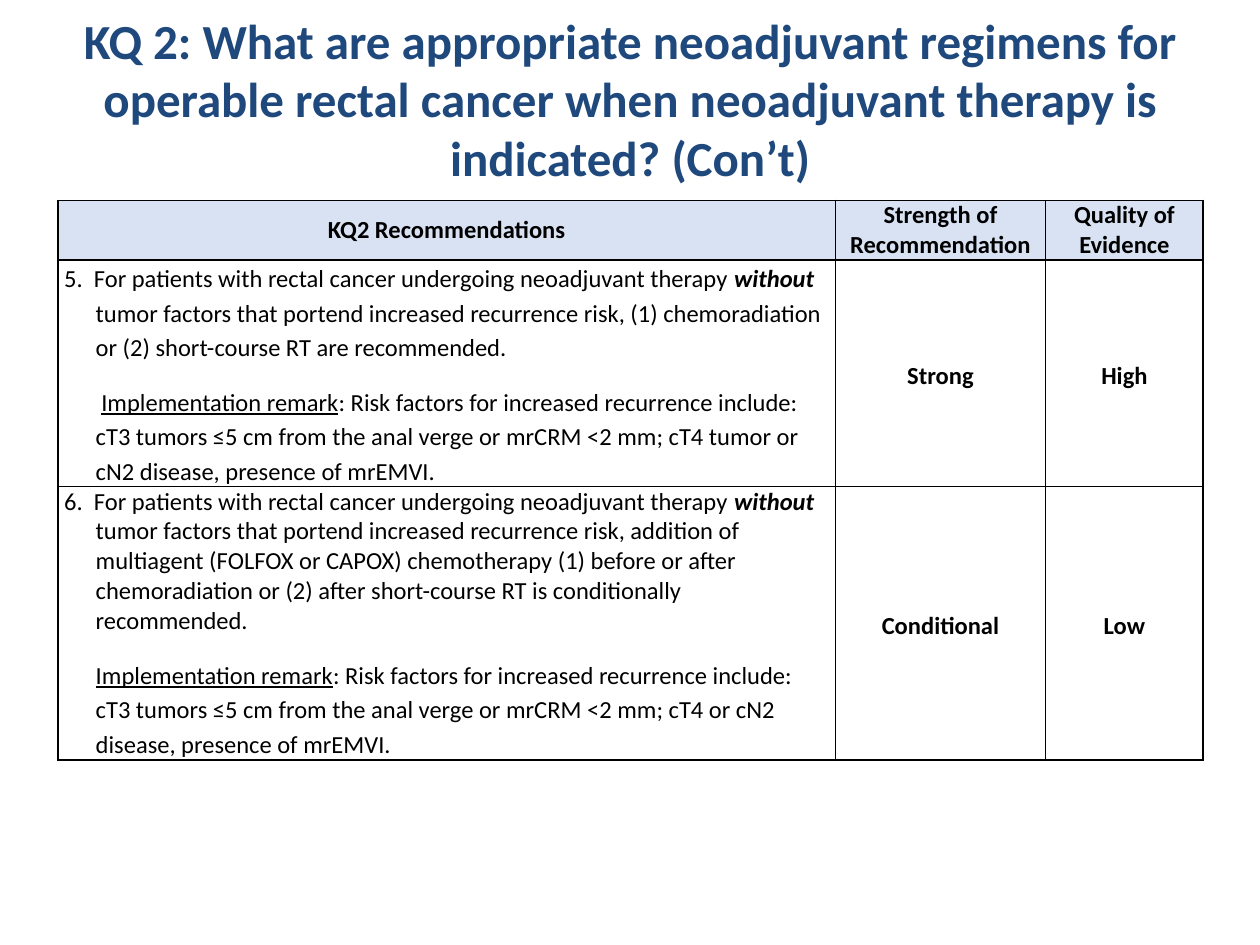
from lxml.etree import SubElement
from pptx import Presentation
from pptx.dml.color import RGBColor
from pptx.enum.text import MSO_ANCHOR as Anchor, MSO_AUTO_SIZE as Fit, PP_ALIGN as Align
from pptx.oxml.ns import qn
from pptx.util import Inches, Pt

NAVY = RGBColor(0x1F, 0x49, 0x7D)
BLACK = RGBColor(0, 0, 0)
PALE = RGBColor(0xD9, 0xE2, 0xF3)
FONT = "Calibri"
WIDE, HIGH = 10, 7.5
COLS = [6.17, 1.67, 1.25]
ROWS = [0.47, 1.79, 2.17]

TITLE = ("KQ 2: What are appropriate neoadjuvant regimens for operable "
         "rectal cancer when neoadjuvant therapy is indicated? (Con’t)")
HEADS = ["KQ2 Recommendations", "Strength of Recommendation", "Quality of Evidence"]
START = "For patients with rectal cancer undergoing neoadjuvant therapy "
RISK = " tumor factors that portend increased recurrence risk, "
NOTE = (": Risk factors for increased recurrence include: cT3 tumors ≤5 cm from "
        "the anal verge or mrCRM <2 mm; ")
ITEMS = [
    ("5.  ", "(1) chemoradiation or (2) short-course RT are recommended.",
     "\u00a0", "cT4 tumor or cN2 disease, presence of mrEMVI.", 1.15, "Strong", "High"),
    ("6.  ", "addition of multiagent (FOLFOX or CAPOX) chemotherapy (1) before or "
     "after chemoradiation or (2) after short-course RT is conditionally recommended.",
     "", "cT4 or cN2 disease, presence of mrEMVI.", 1.0, "Conditional", "Low"),
]


def add_run(para, text, style="", size=14, color=BLACK):
    """Add one run; style letters are b, i and u."""
    run = para.add_run()
    run.text = text
    font = run.font
    font.name, font.size, font.color.rgb = FONT, Pt(size), color
    font.bold, font.italic, font.underline = (key in style for key in "biu")


def add_title(slide):
    """Fill and place the title placeholder."""
    title = slide.shapes.title
    title.left, title.top = Inches(0.05 * WIDE), Inches(0.03)
    title.width, title.height = Inches(0.9 * WIDE), Inches(1.25)
    frame = title.text_frame
    frame.word_wrap, frame.auto_size = True, Fit.NONE
    frame.vertical_anchor = Anchor.TOP
    para = frame.paragraphs[0]
    para.alignment = Align.CENTER
    add_run(para, TITLE, "b", 28, NAVY)


def dress(cell, fill=None):
    """Give a cell its margins, borders and fill."""
    cell.margin_left = cell.margin_right = Inches(0.05)
    cell.margin_top = cell.margin_bottom = 0
    props = cell._tc.get_or_add_tcPr()
    for side in ("lnL", "lnR", "lnT", "lnB"):
        line = SubElement(props, qn(f"a:{side}"), w=str(Pt(1)))
        solid = SubElement(line, qn("a:solidFill"))
        SubElement(solid, qn("a:srgbClr"), val=str(BLACK))
    if fill is None:
        cell.fill.background()
    else:
        cell.fill.solid()
        cell.fill.fore_color.rgb = fill


def add_label(cell, text, space=1.15):
    """Write a bold label in the centre of a cell."""
    cell.vertical_anchor = Anchor.MIDDLE
    para = cell.text_frame.paragraphs[0]
    para.alignment, para.line_spacing = Align.CENTER, space
    add_run(para, text, "b")


def add_para(para, runs, first, space):
    """Write an indented paragraph from (text, style) runs."""
    props = para._p.get_or_add_pPr()
    props.set("marL", str(Inches(0.25)))
    props.set("indent", str(Inches(first)))
    para.line_spacing = space
    for text, style in runs:
        add_run(para, text, style)


def add_advice(cell, mark, advice, lead, risks, space):
    """Write a recommendation and its remark."""
    frame = cell.text_frame
    para = frame.paragraphs[0]
    add_para(para, [(mark + START, ""), ("without", "bi"), (RISK + advice, "")],
             -0.25, space)
    para.space_after = Pt(12)
    runs = [(lead, "b")] if lead else []
    runs += [("Implementation remark", "u"), (NOTE + risks, "")]
    add_para(frame.add_paragraph(), runs, 0, 1.15)


def add_grid(slide):
    """Build the table of recommendations."""
    grid = slide.shapes.add_table(
        len(ROWS), len(COLS), Inches(0.46), Inches(1.59),
        Inches(sum(COLS)), Inches(sum(ROWS))).table
    for col, width in zip(grid.columns, COLS):
        col.width = Inches(width)
    for row, height in zip(grid.rows, ROWS):
        row.height = Inches(height)
    for cell, text in zip(grid.rows[0].cells, HEADS):
        dress(cell, PALE)
        add_label(cell, text, 1.0)
    for num, (*advice, grade, proof) in enumerate(ITEMS, 1):
        cells = list(grid.rows[num].cells)
        for cell in cells:
            dress(cell)
        add_advice(cells[0], *advice)
        add_label(cells[1], grade)
        add_label(cells[2], proof)


def main():
    """Build and save the slide."""
    deck = Presentation()
    deck.slide_width, deck.slide_height = Inches(WIDE), Inches(HIGH)
    slide = deck.slides.add_slide(deck.slide_layouts[5])
    add_title(slide)
    add_grid(slide)
    deck.save("out.pptx")


if __name__ == "__main__":
    main()
